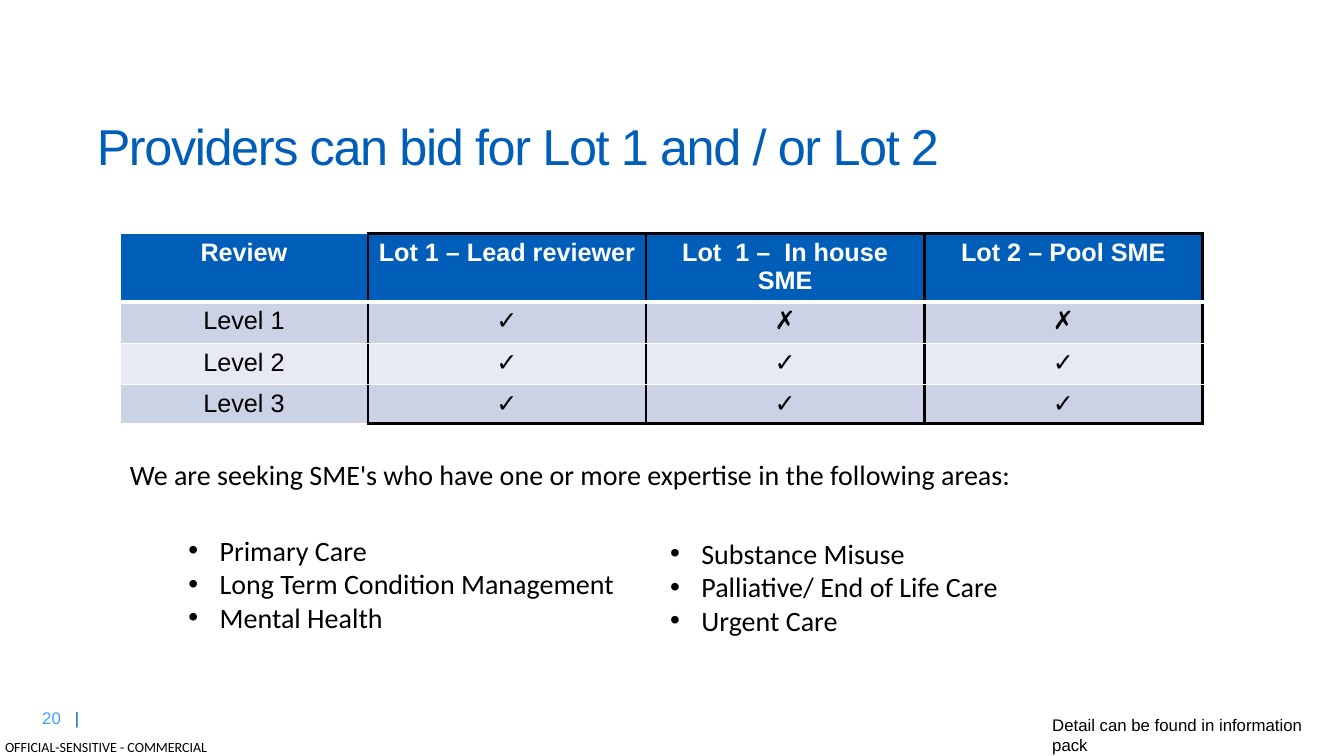
"""Build the slide on lots that providers can bid for."""
from dataclasses import dataclass

import lxml.etree
import pptx
import pptx.dml.color
import pptx.enum.text
import pptx.oxml.ns
import pptx.util

GRID_COLUMNS, GRID_ROWS = 160, 90
SLIDE_WIDTH, SLIDE_HEIGHT = pptx.util.Inches(13.33), pptx.util.Inches(7.5)
BLUE, PALE_BLUE, BLACK, WHITE = "005EB8", "3B9FFF", "000000", "FFFFFF"
BANDS = ("CCD2E6", "E7EAF3")
BULLET_INDENT = 3.72


@dataclass(frozen=True)
class Area:
    """A rectangle in grid columns and rows."""
    left: float
    top: float
    width: float
    height: float


@dataclass(frozen=True)
class Style:
    """The look of a run."""
    size: float
    font: str = "Arial"
    color: str = BLACK
    bold: bool = False
    spacing: float = 0


@dataclass(frozen=True)
class TextBlock:
    """A text box whose lines are lists of (text, style) runs."""
    area: Area
    lines: list
    bulleted: bool = False
    wrap: bool = True
    inset: bool = True
    tab: float = 0


BODY = Style(20, "Calibri")
HEADER = Style(18, color=WHITE, bold=True)
CELL = Style(18)

TITLE_AREA = Area(10.32, 13.68, 139.68, 8.04)
TITLE = "Providers can bid for Lot 1 and / or Lot 2"
TABLE_AREA = Area(14.28, 27.84, 128.88, 22.59)
TABLE_COLUMNS = (29.52, 33.12, 33.12, 33.12)
TABLE_ROWS = (8.1, 4.92, 4.92, 4.65)
LOTS = [
    ("Review", "Lot 1 – Lead reviewer", "Lot  1 –  In house SME", "Lot 2 – Pool SME"),
    ("Level 1", "✓", "✗", "✗"),
    ("Level 2", "✓", "✓", "✓"),
    ("Level 3", "✓", "✓", "✓"),
]


def body_lines(*texts: str) -> list:
    """Return one body-styled run per line."""
    return [[(text, BODY)] for text in texts]


TEXT_BLOCKS = [
    TextBlock(Area(0.6, 87.96, 24.48, 2.04),
              [[("OFFICIAL-SENSITIVE - COMMERCIAL", Style(10, "Calibri"))]], inset=False),
    TextBlock(Area(3.84, 83.64, 8.52, 3.6),
              [[("20\t", Style(12, color=PALE_BLUE)), ("|", Style(12, color=BLUE))]], tab=3.89),
    TextBlock(Area(14.28, 53.88, 140.88, 8.04), body_lines(
        "We are seeking SME's who have one or more expertise in the following areas:")),
    TextBlock(Area(78.6, 63.24, 41.88, 17.4), body_lines(
        "Substance Misuse", "Palliative/ End of Life Care", "Urgent Care"),
        bulleted=True, wrap=False),
    TextBlock(Area(21.24, 62.88, 53.64, 17.4), body_lines(
        "Primary Care", "Long Term Condition Management", "Mental Health"),
        bulleted=True, wrap=False),
    TextBlock(Area(124.08, 84.48, 34.68, 3.6),
              [[("Detail can be found in information pack", Style(12))]]),
]


def across(columns: float) -> int:
    """Convert grid columns to a length."""
    return round(SLIDE_WIDTH * columns / GRID_COLUMNS)


def down(rows: float) -> int:
    """Convert grid rows to a length."""
    return round(SLIDE_HEIGHT * rows / GRID_ROWS)


def bounds(area: Area) -> tuple:
    """Convert an area to left, top, width and height."""
    return across(area.left), down(area.top), across(area.width), down(area.height)


def paint(target, color: str) -> None:
    """Give a colour format its hex colour."""
    target.rgb = pptx.dml.color.RGBColor.from_string(color)


def child(parent, tag: str, **attributes):
    """Append an XML element with attributes."""
    return lxml.etree.SubElement(parent, pptx.oxml.ns.qn(tag), attributes)


def add_run(paragraph, text: str, style: Style) -> None:
    """Add a styled run."""
    run = paragraph.add_run()
    run.text = text
    run.font.size = pptx.util.Pt(style.size)
    run.font.name = style.font
    run.font.bold = style.bold
    paint(run.font.color, style.color)
    if style.spacing:
        run._r.get_or_add_rPr().set("spc", str(round(style.spacing * 100)))


def add_text_block(slide, block: TextBlock) -> None:
    """Draw a text box."""
    frame = slide.shapes.add_textbox(*bounds(block.area)).text_frame
    frame.word_wrap = block.wrap
    if not block.inset:
        frame.margin_left = frame.margin_right = 0
        frame.margin_top = frame.margin_bottom = 0
    for index, line in enumerate(block.lines):
        paragraph = frame.add_paragraph() if index else frame.paragraphs[0]
        properties = paragraph._p.get_or_add_pPr()
        if block.bulleted:
            indent = across(BULLET_INDENT)
            properties.set("marL", str(indent))
            properties.set("indent", str(-indent))
            child(properties, "a:buFont", typeface="Arial")
            child(properties, "a:buChar", char="•")
        if block.tab:
            stops = child(properties, "a:tabLst")
            child(stops, "a:tab", pos=str(across(block.tab)), algn="l")
        for text, style in line:
            add_run(paragraph, text, style)


def add_border(cell, side: str, color: str, points: float) -> None:
    """Draw one edge of a cell."""
    line = child(cell._tc.get_or_add_tcPr(), f"a:ln{side}", w=str(pptx.util.Pt(points)))
    child(child(line, "a:solidFill"), "a:srgbClr", val=color)


def cell_borders(row: int, column: int) -> dict:
    """Frame the lot columns in black and rule the rest in white."""
    thin, thick = (WHITE, 1), (BLACK, 2.25)
    header_rule = (WHITE, 3)
    last_row = len(LOTS) - 1
    return {
        "L": thick if column else thin,
        "R": thick,
        "T": header_rule if row == 1 else thick if column and row == 0 else thin,
        "B": header_rule if row == 0 else thick if column and row == last_row else thin,
    }


def add_lots_table(slide) -> None:
    """Draw the table of review levels and lots."""
    table = slide.shapes.add_table(len(TABLE_ROWS), len(TABLE_COLUMNS), *bounds(TABLE_AREA)).table
    for column, width in zip(table.columns, TABLE_COLUMNS):
        column.width = across(width)
    for row, height in zip(table.rows, TABLE_ROWS):
        row.height = down(height)
    for row, texts in enumerate(LOTS):
        for column, text in enumerate(texts):
            cell = table.cell(row, column)
            for side, (color, points) in cell_borders(row, column).items():
                add_border(cell, side, color, points)
            cell.fill.solid()
            paint(cell.fill.fore_color, BANDS[(row - 1) % 2] if row else BLUE)
            paragraph = cell.text_frame.paragraphs[0]
            paragraph.alignment = pptx.enum.text.PP_ALIGN.CENTER
            add_run(paragraph, text, CELL if row else HEADER)


def set_title(slide) -> None:
    """Place and format the title."""
    title = slide.shapes.title
    title.left, title.top, title.width, title.height = bounds(TITLE_AREA)
    title.text_frame.vertical_anchor = pptx.enum.text.MSO_ANCHOR.MIDDLE
    paragraph = title.text_frame.paragraphs[0]
    paragraph.alignment = pptx.enum.text.PP_ALIGN.LEFT
    paragraph.line_spacing = 0.9
    add_run(paragraph, TITLE, Style(36, color=BLUE, spacing=-1))


def main() -> None:
    """Build and save the presentation."""
    presentation = pptx.Presentation()
    presentation.slide_width, presentation.slide_height = SLIDE_WIDTH, SLIDE_HEIGHT
    slide = presentation.slides.add_slide(presentation.slide_layouts.get_by_name("Title Only"))
    set_title(slide)
    add_lots_table(slide)
    for block in TEXT_BLOCKS:
        add_text_block(slide, block)
    presentation.save("out.pptx")


if __name__ == "__main__":
    main()
